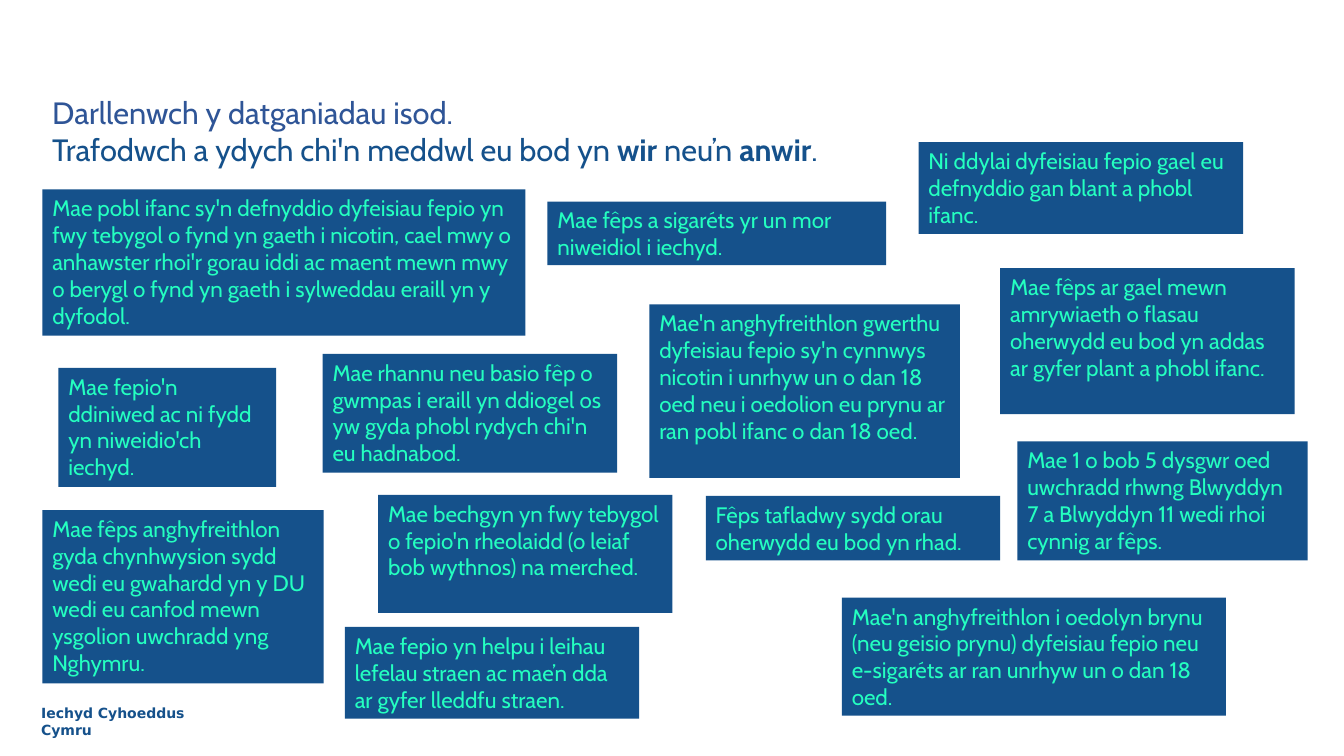
from pptx import Presentation
from pptx.dml.color import RGBColor
from pptx.enum.shapes import MSO_SHAPE
from pptx.enum.text import MSO_ANCHOR, PP_ALIGN
from pptx.util import Inches, Pt

NAVY = RGBColor(0x15, 0x51, 0x8B)
BLUE = RGBColor(0x2F, 0x55, 0x97)
MINT = RGBColor(0x24, 0xFF, 0xC0)
BODY_FONT = "Cabin"
FOOTER_FONT = "DejaVu Sans"

# Each statement: (left, top, width, height), text
STATEMENTS = [
    ((9.11, 1.41, 3.22, 0.91),
     "Ni ddylai dyfeisiau fepio gael eu defnyddio gan blant a phobl ifanc."),
    ((6.44, 3.02, 3.08, 1.72),
     "Mae'n anghyfreithlon gwerthu dyfeisiau fepio sy'n cynnwys nicotin i unrhyw un "
     "o dan 18 oed neu i oedolion eu prynu ar ran pobl ifanc o dan 18 oed."),
    ((8.35, 5.93, 3.81, 1.17),
     "Mae'n anghyfreithlon i oedolyn brynu (neu geisio prynu) dyfeisiau fepio neu "
     "e-sigaréts ar ran unrhyw un o dan 18 oed."),
    ((0.42, 1.88, 4.79, 1.45),
     "Mae pobl ifanc sy'n defnyddio dyfeisiau fepio yn fwy tebygol o fynd yn gaeth i "
     "nicotin, cael mwy o anhawster rhoi'r gorau iddi ac maent mewn mwy o berygl o "
     "fynd yn gaeth i sylweddau eraill yn y dyfodol."),
    ((0.42, 5.06, 2.79, 1.72),
     "Mae fêps anghyfreithlon gyda chynhwysion sydd wedi eu gwahardd yn y DU wedi eu "
     "canfod mewn ysgolion uwchradd yng Nghymru."),
    ((10.09, 4.38, 2.88, 1.18),
     "Mae 1 o bob 5 dysgwr oed uwchradd rhwng Blwyddyn 7 a Blwyddyn 11 wedi rhoi "
     "cynnig ar fêps."),
    ((0.58, 3.65, 2.16, 1.18),
     "Mae fepio'n ddiniwed ac ni fydd yn niweidio'ch iechyd."),
    ((9.92, 2.66, 2.92, 1.45),
     "Mae fêps ar gael mewn amrywiaeth o flasau oherwydd eu bod yn addas ar gyfer "
     "plant a phobl ifanc."),
    ((3.42, 6.22, 2.92, 0.91),
     "Mae fepio yn helpu i leihau lefelau straen ac mae’n dda ar gyfer lleddfu straen."),
    ((5.43, 2, 3.36, 0.63),
     "Mae fêps a sigaréts yr un mor niweidiol i iechyd."),
    ((3.75, 4.91, 2.92, 1.17),
     "Mae bechgyn yn fwy tebygol o fepio'n rheolaidd (o leiaf bob wythnos) na merched."),
    ((3.2, 3.51, 2.92, 1.18),
     "Mae rhannu neu basio fêp o gwmpas i eraill yn ddiogel os yw gyda phobl rydych "
     "chi'n eu hadnabod."),
    ((7, 4.92, 2.92, 0.64),
     "Fêps tafladwy sydd orau oherwydd eu bod yn rhad."),
]


def style_font(font, name, size, color, bold=False):
    font.name = name
    font.size = Pt(size)
    font.color.rgb = color
    font.bold = bold


def add_text_box(slide, box):
    text_frame = slide.shapes.add_textbox(*map(Inches, box)).text_frame
    text_frame.word_wrap = True
    return text_frame


def add_footer(slide, box):
    text_frame = add_text_box(slide, box)
    text_frame.text = "Iechyd Cyhoeddus Cymru"
    style_font(text_frame.paragraphs[0].runs[0].font, FOOTER_FONT, 10, NAVY, True)


def add_title(slide, box):
    text_frame = add_text_box(slide, box)
    text_frame.vertical_anchor = MSO_ANCHOR.BOTTOM
    text_frame.text = "Darllenwch y datganiadau isod."
    style_font(text_frame.paragraphs[0].runs[0].font, BODY_FONT, 22, BLUE)
    # Second line with the two choices in bold
    paragraph = text_frame.add_paragraph()
    parts = ["Trafodwch a ydych chi'n meddwl eu bod yn ", "wir", " neu’n ", "anwir", "."]
    for part in parts:
        run = paragraph.add_run()
        run.text = part
        style_font(run.font, BODY_FONT, 22, NAVY, part in ("wir", "anwir"))


def add_statement(slide, box, text):
    shape = slide.shapes.add_shape(MSO_SHAPE.RECTANGLE, *map(Inches, box))
    shape.shadow.inherit = False
    shape.fill.solid()
    shape.fill.fore_color.rgb = NAVY
    shape.line.fill.background()
    text_frame = shape.text_frame
    text_frame.word_wrap = True
    text_frame.vertical_anchor = MSO_ANCHOR.TOP
    text_frame.text = text
    paragraph = text_frame.paragraphs[0]
    paragraph.alignment = PP_ALIGN.LEFT
    style_font(paragraph.runs[0].font, BODY_FONT, 16, MINT)


def main():
    presentation = Presentation()
    presentation.slide_width = Inches(13.33)
    presentation.slide_height = Inches(7.5)
    slide = presentation.slides.add_slide(presentation.slide_layouts[6])

    add_footer(slide, (0.31, 6.94, 1.81, 0.43))
    for box, text in STATEMENTS:
        add_statement(slide, box, text)
    add_title(slide, (0.42, 1.27, 10.67, 0.44))
    presentation.save("out.pptx")


if __name__ == "__main__":
    main()
